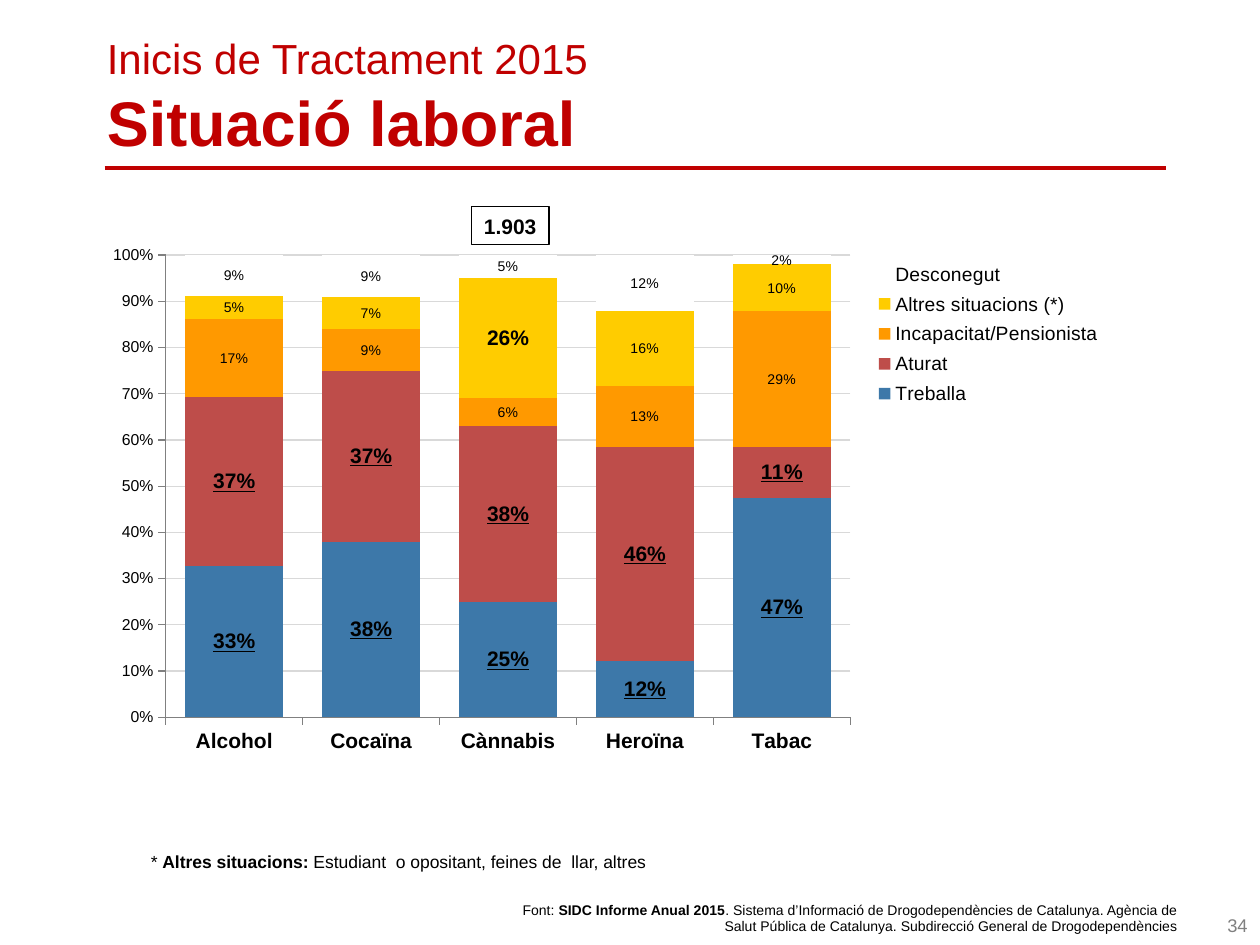
from pptx import Presentation
from pptx.chart.data import CategoryChartData
from pptx.dml.color import RGBColor
from pptx.enum.chart import XL_CHART_TYPE as CT, XL_LABEL_POSITION as LP
from pptx.enum.chart import XL_LEGEND_POSITION as LEG, XL_TICK_MARK as TM
from pptx.enum.shapes import MSO_CONNECTOR, MSO_SHAPE
from pptx.enum.text import MSO_ANCHOR, PP_ALIGN
from pptx.oxml import parse_xml
from pptx.oxml.ns import nsdecls, qn
from pptx.util import Cm, Pt

FONT = "Arial"
COLORS = {
    "red": "C00000", "text": "000000", "page": "808080", "white": "FFFFFF",
    "grid": "D9D9D9", "axis": "808080", "blue": "3D78A9", "brick": "BE4D4A",
    "orange": "FF9900", "yellow": "FFCC00",
}
CATEGORIES = ["Alcohol", "Cocaïna", "Cànnabis", "Heroïna", "Tabac"]
# name, values, colour, emphasised labels
SERIES = [
    ("Treballa", (0.33, 0.38, 0.25, 0.12, 0.47), "blue", True),
    ("Aturat", (0.37, 0.37, 0.38, 0.46, 0.11), "brick", True),
    ("Incapacitat/Pensionista", (0.17, 0.09, 0.06, 0.13, 0.29), "orange", False),
    ("Altres situacions (*)", (0.05, 0.07, 0.26, 0.16, 0.10), "yellow", False),
    ("Desconegut", (0.09, 0.09, 0.05, 0.12, 0.02), "white", False),
]


def rgb(name):
    return RGBColor.from_string(COLORS[name])


def style(font, size, color="text", bold=False, underline=None):
    font.name, font.size, font.bold = FONT, Pt(size), bold
    font.color.rgb = rgb(color)
    if underline:
        font.underline = True


def add_header(s, left, top, width, height):
    # Two-line title
    sp = s.shapes.title
    sp.left, sp.top, sp.width, sp.height = Cm(left), Cm(top), Cm(width), Cm(height)
    tf = sp.text_frame
    tf.text = "Inicis de Tractament 2015\nSituació laboral"
    tf.vertical_anchor = MSO_ANCHOR.BOTTOM
    for p, size, bold in zip(tf.paragraphs, (24, 36), (False, True)):
        p.alignment = PP_ALIGN.LEFT
        p.line_spacing = 1.0
        p.space_before = Pt(0)
        style(p.runs[0].font, size, "red", bold)

    # Rule under the title
    y = Cm(top + height + 0.05)
    rule = s.shapes.add_connector(MSO_CONNECTOR.STRAIGHT, Cm(left + 0.21), y,
                                  Cm(left + 21.6), y)
    rule.line.color.rgb = rgb("red")
    rule.line.width = Pt(2.25)
    rule._element.spPr.append(parse_xml(f"<a:effectLst {nsdecls('a')}/>"))


def manual_layout(x, y, w, h, inner=False):
    target = '<c:layoutTarget val="inner"/>' if inner else ""
    return parse_xml(
        f"<c:layout {nsdecls('c')}><c:manualLayout>{target}"
        '<c:xMode val="edge"/><c:yMode val="edge"/>'
        f'<c:x val="{x}"/><c:y val="{y}"/><c:w val="{w}"/><c:h val="{h}"/>'
        "</c:manualLayout></c:layout>")


def format_axes(chart):
    cat, val = chart.category_axis, chart.value_axis
    for axis, size, bold in ((cat, 12, True), (val, 9, False)):
        style(axis.tick_labels.font, size, bold=bold)
        axis.major_tick_mark = TM.OUTSIDE
        axis.minor_tick_mark = TM.NONE
        axis.format.line.color.rgb = rgb("axis")
    val.minimum_scale, val.maximum_scale, val.major_unit = 0, 1, 0.1
    val.tick_labels.number_format = "0%"
    val.tick_labels.number_format_is_linked = False
    val.has_major_gridlines = True
    line = val.major_gridlines.format.line
    line.color.rgb, line.width = rgb("grid"), Pt(0.75)


def format_series(plot):
    for ser, (_, _, color, strong) in zip(plot.series, SERIES):
        ser.format.fill.solid()
        ser.format.fill.fore_color.rgb = rgb(color)
        labels = ser.data_labels
        labels.show_value = True
        labels.number_format, labels.number_format_is_linked = "0%", False
        labels.position = LP.CENTER
        style(labels.font, 12 if strong else 8, bold=strong, underline=strong)


def add_employment_chart(s, left, top, width, height):
    data = CategoryChartData(number_format="0%")
    data.categories = CATEGORIES
    for name, values, _, _ in SERIES:
        data.add_series(name, values)
    chart = s.shapes.add_chart(CT.COLUMN_STACKED_100, Cm(left), Cm(top),
                               Cm(width), Cm(height), data).chart
    chart.has_title = False
    style(chart.font, 18)
    plot = chart.plots[0]
    plot.gap_width, plot.overlap = 39, 100
    plot.vary_by_categories = False
    format_axes(chart)
    format_series(plot)

    # Highlight the large share of other situations for cannabis
    label = plot.series[3].points[2].data_label
    style(label.font, 12, bold=True)
    label.position = LP.CENTER

    # Legend and plot placement
    chart.has_legend = True
    legend = chart.legend
    legend.position = LEG.RIGHT
    legend.include_in_layout = False
    style(legend.font, 11)
    legend._element.find(qn("c:legendPos")).addnext(
        manual_layout(0.76, 0.04, 0.23, 0.3))
    area = chart._chartSpace.chart.plotArea
    for old in area.findall(qn("c:layout")):
        area.remove(old)
    area.insert(0, manual_layout(0.07, 0.04, 0.67, 0.88, inner=True))


def add_text(s, left, top, width, height, runs, size, color="text", align=PP_ALIGN.LEFT):
    """Place one paragraph made of (text, bold) runs."""
    tf = s.shapes.add_textbox(Cm(left), Cm(top), Cm(width), Cm(height)).text_frame
    tf.word_wrap = True
    p = tf.paragraphs[0]
    p.alignment = align
    for text, bold in runs:
        r = p.add_run()
        r.text = text
        style(r.font, size, color, bold)


def add_total_box(s, left, top, width, height):
    sp = s.shapes.add_shape(MSO_SHAPE.RECTANGLE, Cm(left), Cm(top), Cm(width), Cm(height))
    sp.shadow.inherit = False
    sp.fill.background()
    sp.line.color.rgb, sp.line.width = rgb("text"), Pt(0.75)
    tf = sp.text_frame
    tf.word_wrap = False
    tf.text = "1.903"
    tf.paragraphs[0].alignment = PP_ALIGN.CENTER
    style(tf.paragraphs[0].runs[0].font, 12, bold=True)


def add_footer(s, left, top, width, height):
    # Footnote, source and page number
    add_text(s, left, top, 17.1, 0.69, [
        ("* ", False), ("Altres situacions: ", True),
        ("Estudiant  o opositant, feines de  llar, altres", False)], 10)
    add_text(s, left + 6.91, top + 1, 14.3, height - 1, [
        ("Font: ", False), ("SIDC Informe Anual 2015", True),
        (". Sistema d’Informació de Drogodependències de Catalunya. Agència de "
         "Salut Pública de Catalunya. Subdirecció General de Drogodependències",
         False)], 8, align=PP_ALIGN.RIGHT)
    add_text(s, left + width - 1.09, top + 1.27, 1.09, 0.79, [("34", False)],
             10.5, "page", PP_ALIGN.RIGHT)


def main():
    prs = Presentation()
    prs.slide_width, prs.slide_height = Cm(25.4), Cm(19.05)
    s = prs.slides.add_slide(prs.slide_layouts[5])
    add_header(s, 1.9, 0.53, 23.5, 2.8)
    add_employment_chart(s, 1.9, 4.72, 20.6, 10.59)
    add_footer(s, 2.79, 17.04, 22.61, 2.01)
    add_total_box(s, 9.5, 4.17, 1.57, 0.76)
    prs.save("out.pptx")


if __name__ == "__main__":
    main()
